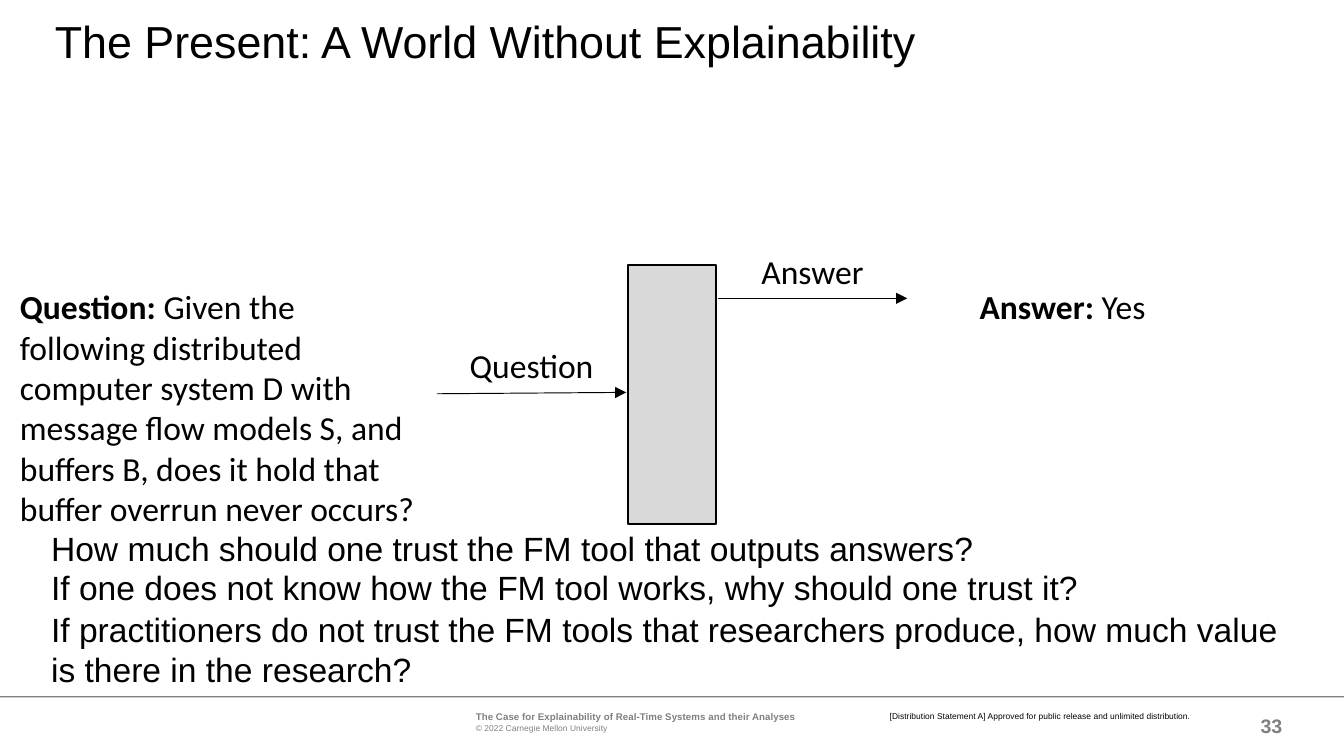
from lxml.etree import SubElement
from pptx import Presentation
from pptx.dml.color import RGBColor
from pptx.enum.shapes import MSO_CONNECTOR as Connector, MSO_SHAPE as Shape
from pptx.enum.text import MSO_ANCHOR as Anchor, PP_ALIGN as Align
from pptx.oxml.ns import qn
from pptx.util import Inches, Pt

BLACK = RGBColor(0x00, 0x00, 0x00)
GRAY = RGBColor(0x80, 0x80, 0x80)
LIGHT_GRAY = RGBColor(0xD9, 0xD9, 0xD9)

TITLE = {"name": "Arial", "size": Pt(24)}
BODY = {"name": "Arial", "size": Pt(18)}
DIAGRAM = {"name": "Calibri", "size": Pt(18)}
DIAGRAM_BOLD = {**DIAGRAM, "bold": True}
NOTICE = {"name": "Arial", "size": Pt(4.5)}
FOOTER_TITLE = {"name": "Arial", "size": Pt(5.25), "bold": True}
PAGE_NUMBER = {"name": "Arial", "size": Pt(10.5), "bold": True}

DEFAULT_INSETS = (0.1, 0.05, 0.1, 0.05)
NO_INSETS = (0, 0, 0, 0)

CONCERNS = [
    (0, 0.3, "How much should one trust the FM tool that outputs answers?"),
    (0.29, 0.3, "If one does not know how the FM tool works, why should one trust it?"),
    (0.6, 0.61, "If practitioners do not trust the FM tools that researchers produce, "
                "how much value is there in the research?"),
]


def add_text(slide, box, paragraphs, color=BLACK, insets=DEFAULT_INSETS,
             align=Align.LEFT, anchor=Anchor.TOP, spacing=None):
    """Add a wrapped text box; each paragraph is a list of (text, font format) runs."""
    frame = slide.shapes.add_textbox(*map(Inches, box)).text_frame
    left, top, right, bottom = map(Inches, insets)
    settings = {"word_wrap": True, "vertical_anchor": anchor, "margin_left": left,
                "margin_top": top, "margin_right": right, "margin_bottom": bottom}
    for name, value in settings.items():
        setattr(frame, name, value)
    for index, runs in enumerate(paragraphs):
        paragraph = frame.add_paragraph() if index else frame.paragraphs[0]
        paragraph.alignment = align
        paragraph.line_spacing = spacing
        for text, font_format in runs:
            run = paragraph.add_run()
            run.text = text
            run.font.color.rgb = color
            for name, value in font_format.items():
                setattr(run.font, name, value)


def add_block(slide, box, fill, line=None):
    """Add a plain rectangle with an optional one-point outline."""
    shape = slide.shapes.add_shape(Shape.RECTANGLE, *map(Inches, box))
    shape.shadow.inherit = False
    shape.fill.solid()
    shape.fill.fore_color.rgb = fill
    if line is None:
        shape.line.fill.background()
    else:
        shape.line.color.rgb = line
        shape.line.width = Pt(1)


def add_arrow(slide, start, end):
    """Add a thin black arrow that points at its end."""
    arrow = slide.shapes.add_connector(Connector.STRAIGHT, *map(Inches, start + end))
    arrow.line.color.rgb = BLACK
    arrow.line.width = Pt(0.5)
    SubElement(arrow.line._get_or_add_ln(), qn("a:tailEnd"), type="triangle")
    SubElement(arrow._element.spPr, qn("a:effectLst"))


def add_title(slide, box):
    """Add the slide title."""
    add_text(slide, box, [[("The Present: A World Without Explainability", TITLE)]], spacing=0.9)


def add_diagram(slide, left, top, width):
    """Add the opaque tool with its question on the left and its answer on the right."""
    tool_left, tool_width, arrow_width, gap = left + 4.62, 0.66, 1.41, 0.01
    answer_left = tool_left + tool_width + gap
    question_left = tool_left - arrow_width - gap
    add_block(slide, (tool_left, top + 0.15, tool_width, 1.93), LIGHT_GRAY, BLACK)
    for label, label_left, label_top, drop in (("Question", question_left, top + 0.7, 0.41),
                                               ("Answer", answer_left, top, 0.4)):
        add_text(slide, (label_left, label_top, arrow_width, 0.4),
                 [[(label, DIAGRAM)]], align=Align.CENTER)
        add_arrow(slide, (label_left, label_top + drop),
                  (label_left + arrow_width, label_top + 0.4))
    add_text(slide, (left, top + 0.26, 3.2, 1.92), [[
        ("Question: ", DIAGRAM_BOLD),
        ("Given the following distributed computer system D with message flow models S, "
         "and buffers B, does it hold that buffer overrun never occurs?", DIAGRAM)]])
    add_text(slide, (left + width - 2.75, top + 0.26, 2.75, 0.4),
             [[("Answer: ", DIAGRAM_BOLD), ("Yes", DIAGRAM)]])


def add_concerns(slide, left, top, width):
    """Add the statements about trust below the diagram."""
    for offset, height, text in CONCERNS:
        add_text(slide, (left, top + offset, width, height), [[(text, BODY)]], insets=NO_INSETS)


def add_footer(slide, left, top, width):
    """Add the rule, document title, distribution notice and page number."""
    add_block(slide, (left, top, width, 0.01), GRAY)
    add_text(slide, (left + 3.54, top + 0.11, 2.92, 0.16), [
        [("The Case for Explainability of Real-Time Systems and their Analyses", FOOTER_TITLE)],
        [("© 2022 Carnegie Mellon University", NOTICE)]], GRAY, (0, 0, 0.04, 0))
    add_text(slide, (left + 6.62, top + 0.11, 2.29, 0.08), [
        [("[Distribution Statement A] Approved for public release and unlimited distribution.",
          NOTICE)]], insets=NO_INSETS)
    add_text(slide, (left + 9.1, top + 0.07, 0.44, 0.3), [[("33", PAGE_NUMBER)]],
             GRAY, NO_INSETS, Align.RIGHT, Anchor.MIDDLE)


def main():
    """Build and save the presentation."""
    presentation = Presentation()
    presentation.slide_width = Inches(10)
    presentation.slide_height = Inches(10) * 9 // 16
    slide = presentation.slides.add_slide(presentation.slide_layouts[6])
    add_footer(slide, 0, 5.18, 10)
    add_title(slide, (0.31, 0.1, 9.25, 0.46))
    add_diagram(slide, 0.05, 1.82, 9.89)
    add_concerns(slide, 0.38, 3.93, 9.25)
    presentation.save("out.pptx")


if __name__ == "__main__":
    main()
